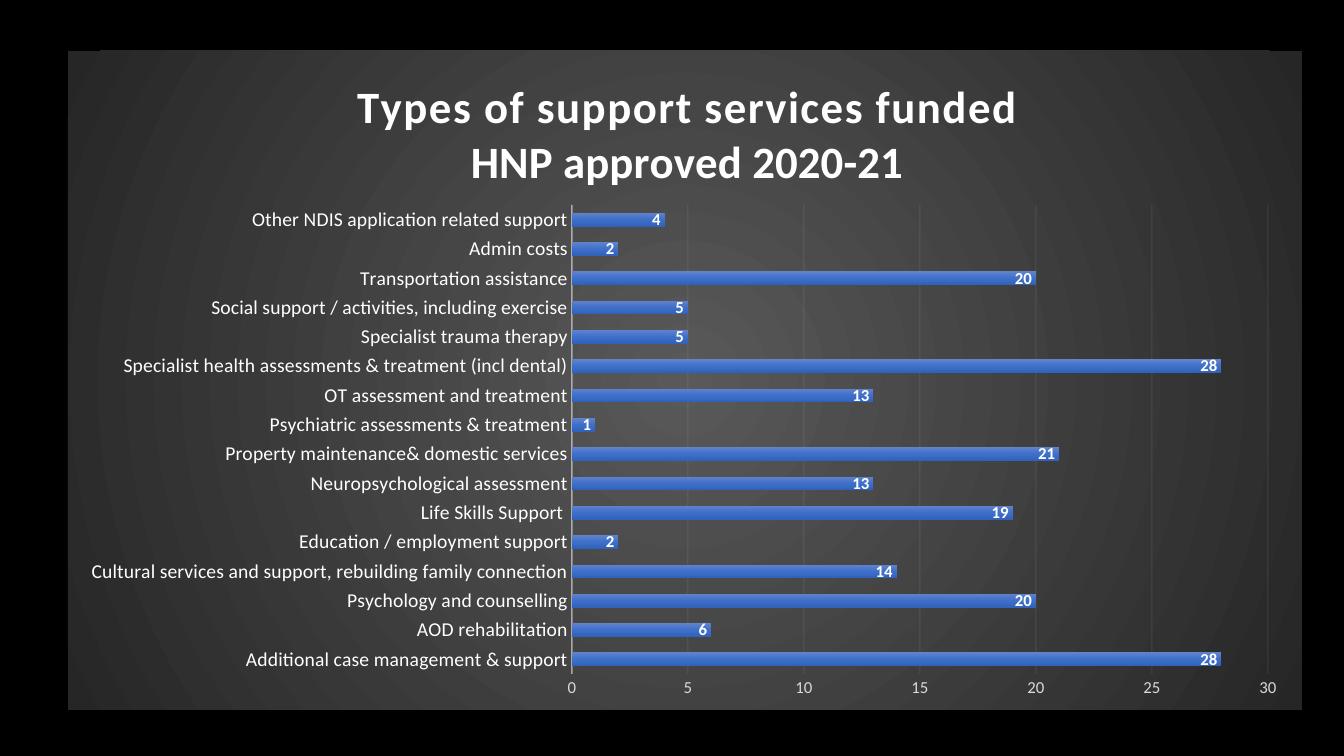
from dataclasses import dataclass

from lxml import etree
from pptx import Presentation
from pptx.chart.data import CategoryChartData
from pptx.dml.color import RGBColor
from pptx.enum.chart import XL_CHART_TYPE as ChartType
from pptx.enum.chart import XL_LABEL_POSITION as LabelPosition
from pptx.enum.chart import XL_TICK_MARK as TickMark
from pptx.oxml import parse_xml
from pptx.oxml.ns import nsdecls, qn
from pptx.util import Pt

PX = 914400 / 100.8


@dataclass(frozen=True)
class Theme:
    font: str = "Calibri"
    background: str = "000000"
    text: str = "FFFFFF"
    muted: str = "D9D9D9"
    line: str = "F2F2F2"
    panel: tuple = ((0, "595959"), (100, "262626"))
    bar: tuple = ((0, "6183CB"), (50, "3E70CA"), (100, "3062BB"))
    title_size: int = 32
    category_size: int = 14
    value_size: int = 12


theme = Theme()


def gradient_xml(stops, direction):
    stop_xml = "".join(
        f'<a:gs pos="{position * 1000}"><a:srgbClr val="{color}"/></a:gs>'
        for position, color in stops
    )
    return f"<a:gradFill><a:gsLst>{stop_xml}</a:gsLst>{direction}</a:gradFill>"


def style_line(line, width, opacity):
    line.width = Pt(width)
    line.fill.solid()
    line.fill.fore_color.rgb = RGBColor.from_string(theme.line)
    color = line.fill._xPr.find(".//" + qn("a:srgbClr"))
    etree.SubElement(color, qn("a:alpha")).set("val", str(opacity * 1000))


services = [
    ("Additional case management & support", 28),
    ("AOD rehabilitation", 6),
    ("Psychology and counselling", 20),
    ("Cultural services and support, rebuilding family connection", 14),
    ("Education / employment support", 2),
    ("Life Skills Support ", 19),
    ("Neuropsychological assessment", 13),
    ("Property maintenance& domestic services", 21),
    ("Psychiatric assessments & treatment", 1),
    ("OT assessment and treatment", 13),
    ("Specialist health assessments & treatment (incl dental)", 28),
    ("Specialist trauma therapy", 5),
    ("Social support / activities, including exercise", 5),
    ("Transportation assistance", 20),
    ("Admin costs", 2),
    ("Other NDIS application related support", 4),
]

presentation = Presentation()
presentation.slide_width = round(1344 * PX)
presentation.slide_height = round(756 * PX)
slide = presentation.slides.add_slide(presentation.slide_layouts[6])
slide.background.fill.solid()
slide.background.fill.fore_color.rgb = RGBColor.from_string(theme.background)

chart_data = CategoryChartData()
chart_data.categories = [name for name, count in services]
chart_data.add_series("Series 1", [count for name, count in services])
left, top, width, height = 68, 51, 1234, 659
frame = slide.shapes.add_chart(
    ChartType.BAR_CLUSTERED,
    *(round(length * PX) for length in (left, top, width, height)),
    chart_data,
)
chart = frame.chart
chart.has_legend = False
chart.font.name = theme.font
chart.font.size = Pt(10)

title = chart.chart_title
title.include_in_layout = False
title.text_frame.text = "Types of support services funded\nHNP approved 2020-21"
for paragraph in title.text_frame.paragraphs:
    font = paragraph.runs[0].font
    font.name = theme.font
    font.size = Pt(theme.title_size)
    font.bold = True
    font.color.rgb = RGBColor.from_string(theme.text)
title.text_frame.paragraphs[0].runs[0].font._element.set("spc", "100")

category_axis = chart.category_axis
value_axis = chart.value_axis
value_axis.minimum_scale = 0
value_axis.maximum_scale = 30
value_axis.major_unit = 5
value_axis.has_major_gridlines = True
style_line(category_axis.format.line, 1, 54)
style_line(value_axis.major_gridlines.format.line, 0.75, 10)
value_axis.format.line.fill.background()

plot = chart.plots[0]
plot.gap_width = 115
plot.overlap = -20
plot.vary_by_categories = False
plot.has_data_labels = True
labels = plot.data_labels
labels.show_value = True
labels.position = LabelPosition.INSIDE_END
labels.font.bold = True

for axis in (category_axis, value_axis):
    axis.major_tick_mark = axis.minor_tick_mark = TickMark.NONE

for font, size, color in (
    (category_axis.tick_labels.font, theme.category_size, theme.text),
    (value_axis.tick_labels.font, theme.value_size, theme.muted),
    (labels.font, theme.value_size, theme.text),
):
    font.name = theme.font
    font.size = Pt(size)
    font.color.rgb = RGBColor.from_string(color)

chart_space = chart._chartSpace
center = '<a:path path="circle"><a:fillToRect l="50000" t="50000" r="50000" b="50000"/></a:path>'
chart_space.chart.addnext(parse_xml(
    f'<c:spPr {nsdecls("c", "a")}>{gradient_xml(theme.panel, center)}'
    "<a:ln><a:noFill/></a:ln></c:spPr>"
))

series = plot.series[0]
series.invert_if_negative = False
series.format.fill.solid()
solid_fill = series._element.find(".//" + qn("a:solidFill"))
bar_fill = gradient_xml(theme.bar, '<a:lin ang="5400000" scaled="0"/>')
solid_fill.getparent().replace(
    solid_fill, parse_xml(bar_fill.replace("<a:gradFill>", f'<a:gradFill {nsdecls("a")}>', 1))
)

plot_area = chart_space.chart.plotArea
for parent, target, box in (
    (title._element, "", {"x": 354 - left, "y": 75 - top}),
    (plot_area, '<c:layoutTarget val="inner"/>',
     {"x": 572 - left, "y": 205 - top, "w": 696, "h": 469}),
):
    modes = "".join(f'<c:{key}Mode val="edge"/>' for key in "xy")
    sizes = "".join(
        f'<c:{key} val="{length / (width if key in "xw" else height):.4f}"/>'
        for key, length in box.items()
    )
    layout = parse_xml(
        f'<c:layout {nsdecls("c")}><c:manualLayout>{target}{modes}{sizes}'
        "</c:manualLayout></c:layout>"
    )
    for old_layout in parent.findall(qn("c:layout")):
        parent.remove(old_layout)
    text = parent.find(qn("c:tx"))
    if text is None:
        parent.insert(0, layout)
    else:
        text.addnext(layout)

presentation.save("out.pptx")
